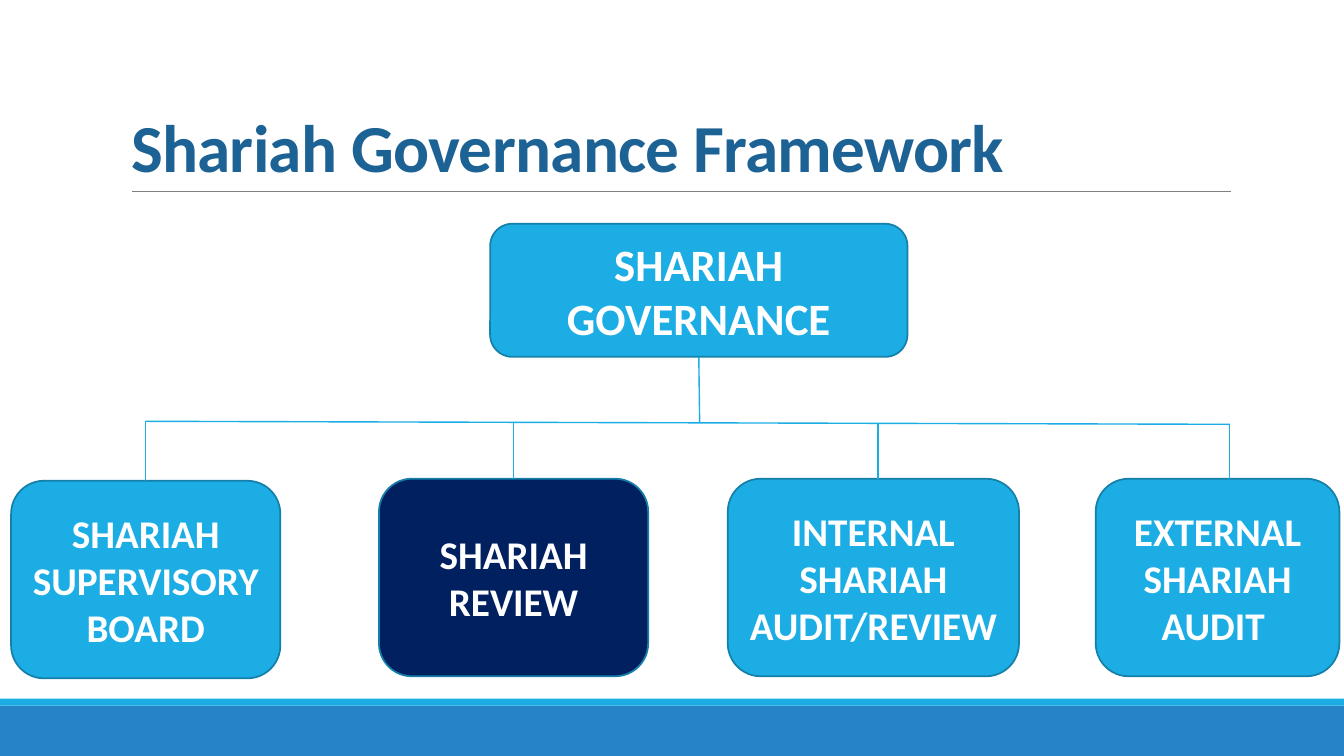
from lxml import etree
from pptx import Presentation
from pptx.dml.color import RGBColor
from pptx.enum.shapes import MSO_CONNECTOR, MSO_SHAPE
from pptx.enum.text import MSO_ANCHOR, MSO_AUTO_SIZE, PP_ALIGN
from pptx.oxml.ns import qn
from pptx.util import Inches, Pt

RECT, ROUND = MSO_SHAPE.RECTANGLE, MSO_SHAPE.ROUNDED_RECTANGLE
STRAIGHT = MSO_CONNECTOR.STRAIGHT
MIDDLE, BOTTOM = MSO_ANCHOR.MIDDLE, MSO_ANCHOR.BOTTOM
CENTER, LEFT = PP_ALIGN.CENTER, PP_ALIGN.LEFT
NO_FIT = MSO_AUTO_SIZE.NONE
TOP_SITE, BOTTOM_SITE = 0, 2

W, H = Inches(13.33), Inches(7.5)
FONT = "Calibri"
COLORS = {
    "sky": "1CADE4", "band": "2683C6", "navy": "002060", "edge": "1580A9",
    "title": "1D6294", "rule": "808080", "white": "FFFFFF",
}

# Bus line ends, in percent of the slide height
BUS_LEFT, BUS_RIGHT = 55.73, 56.13

# Text, left, top, width, fill, x of the drop line (None: middle of the box)
BRANCHES = [
    ("SHARIAH SUPERVISORY BOARD", 0.83, 63.6, 20.03, "sky", None),
    ("SHARIAH REVIEW", 28.2, 63.33, 20.03, "navy", None),
    ("INTERNAL SHARIAH AUDIT/REVIEW", 54.15, 63.33, 21.67, "sky", 65.33),
    ("EXTERNAL SHARIAH\nAUDIT ", 81.53, 63.33, 18.13, "sky", 91.5),
]


def px(share):
    """Percent of the slide width."""
    return round(W * share / 100)


def py(share):
    """Percent of the slide height."""
    return round(H * share / 100)


def rgb(name):
    return RGBColor.from_string(COLORS[name])


def format_text(tf, size, color, align):
    for p in tf.paragraphs:
        p.alignment = align
        for r in p.runs:
            r.font.name, r.font.size, r.font.bold = FONT, Pt(size), True
            r.font.color.rgb = rgb(color)


def add_block(s, kind, x, y, w, h, fill):
    sp = s.shapes.add_shape(kind, px(x), py(y), px(w), py(h))
    sp.shadow.inherit = False
    sp.fill.solid()
    sp.fill.fore_color.rgb = rgb(fill)
    sp.line.fill.background()
    return sp


def add_box(s, text, x, y, w, h, fill, size):
    sp = add_block(s, ROUND, x, y, w, h, fill)
    sp.line.color.rgb = rgb("edge")
    sp.line.width = Pt(1.25)
    tf = sp.text_frame
    tf.text = text
    tf.word_wrap = True
    tf.vertical_anchor = MIDDLE
    format_text(tf, size, "white", CENTER)
    return sp


def add_line(s, x1, y1, x2, y2, color="sky", width=1):
    line = s.shapes.add_connector(STRAIGHT, px(x1), py(y1), px(x2), py(y2))
    line.line.color.rgb = rgb(color)
    line.line.width = Pt(width)
    etree.SubElement(line._element.spPr, qn("a:effectLst"))
    return line


def add_title(s, text):
    sp = s.shapes.title
    sp.left, sp.top, sp.width, sp.height = px(9), py(4.13), px(82.5), py(21.2)
    tf = sp.text_frame
    tf.text = text
    tf.word_wrap = True
    tf.auto_size = NO_FIT
    tf.vertical_anchor = BOTTOM
    format_text(tf, 48, "title", LEFT)
    p = tf.paragraphs[0]
    p.line_spacing = 0.85
    p.runs[0].font._element.set("spc", "-50")


def add_tree(s):
    root = add_box(s, "SHARIAH GOVERNANCE", 36.47, 29.6, 31.05, 17.6, "sky", 32)
    drops = [x + w / 2 if drop is None else drop
             for _, x, _, w, _, drop in BRANCHES]
    first, last = drops[0], drops[-1]

    def bus_y(x):
        return BUS_LEFT + (BUS_RIGHT - BUS_LEFT) * (x - first) / (last - first)

    # Trunk and bus
    trunk = add_line(s, 52, 47.2, 52.06, bus_y(52.06))
    trunk.begin_connect(root, BOTTOM_SITE)
    add_line(s, first, BUS_LEFT, last, BUS_RIGHT)

    # Branches with their drop lines
    for (text, x, y, w, fill, drop), drop_x in zip(BRANCHES, drops):
        box = add_box(s, text, x, y, w, 26.13, fill, 28)
        line = add_line(s, drop_x, bus_y(drop_x), drop_x, y)
        if drop is None:
            line.end_connect(box, TOP_SITE)


def main():
    prs = Presentation()
    prs.slide_width, prs.slide_height = W, H
    s = prs.slides.add_slide(prs.slide_layouts[5])

    # Footer bands
    add_block(s, RECT, 0, 93.33, 100, 6.67, "band")
    add_block(s, RECT, 0, 92.4, 100, 0.93, "sky")

    # Title and its rule
    add_title(s, "Shariah Governance Framework")
    add_line(s, 9.82, 25.33, 91.58, 25.33, "rule", 0.5)

    # Governance chart
    add_tree(s)
    prs.save("out.pptx")


if __name__ == "__main__":
    main()
